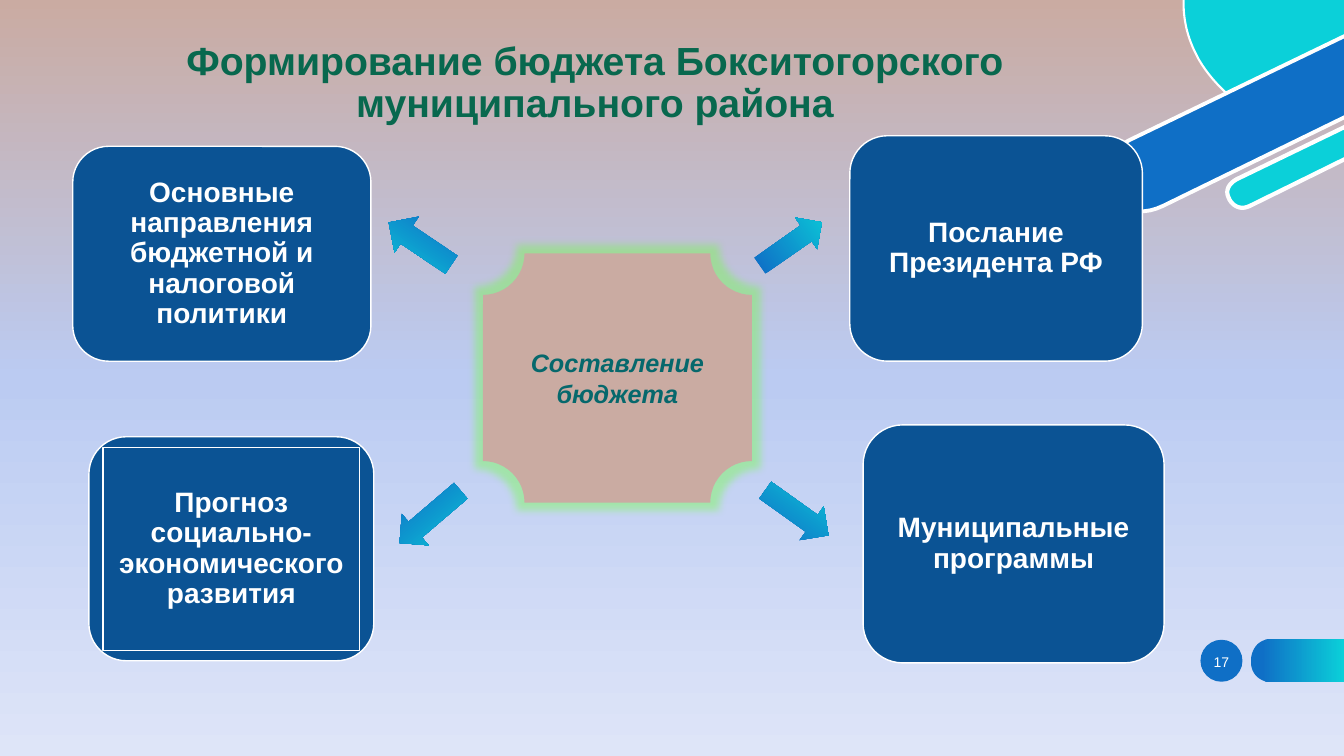
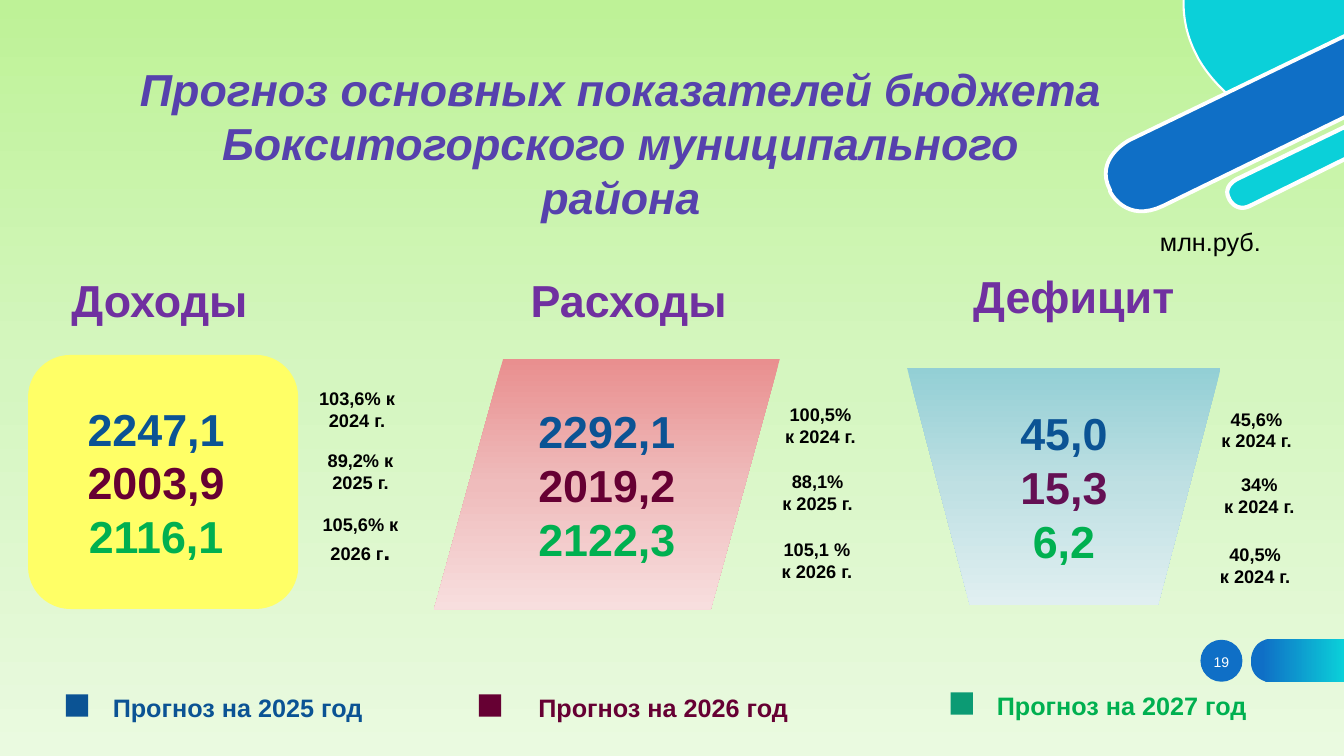
from copy import deepcopy
from dataclasses import dataclass

from lxml.etree import SubElement
from pptx import Presentation
from pptx.dml.color import RGBColor
from pptx.enum.shapes import MSO_SHAPE
from pptx.enum.text import MSO_ANCHOR, MSO_AUTO_SIZE, PP_ALIGN
from pptx.oxml.ns import qn
from pptx.slide import Slide
from pptx.util import Pt


@dataclass(frozen=True)
class Theme:
    font: str = "Arial"
    blue: str = "0F6FC6"
    cyan: str = "0BD0D9"
    white: str = "FFFFFF"
    black: str = "000000"
    navy: str = "0B5394"
    wine: str = "660033"
    plum: str = "641054"
    green: str = "00B050"
    sea: str = "0C9B74"
    forest: str = "08684E"
    teal: str = "06686C"
    violet: str = "5641AD"
    purple: str = "7030A0"
    clay: str = "CAABA2"
    yellow: str = "FFFF66"
    glow: str = "70FF3E"
    accent: tuple = ((0.12, "0F6FC6"), (1, "0BD0D9"))
    dusk: tuple = ((0, "CAABA2"), (0.5, "BBCBF2"), (1, "DEE5F8"))
    meadow: tuple = ((0, "BEF297"), (0.5, "D5F6C0"), (1, "EAFAE0"))
    rose: tuple = ((0, "E98F8F"), (0.5, "EFBCBC"), (1, "F7DEDE"))
    lagoon: tuple = ((0, "93CFD5"), (0.5, "BFE0E3"), (1, "E0EFF1"))
    large: int = 32
    title: int = 28
    card: int = 20
    label: int = 18
    note: int = 13
    number: int = 10


theme = Theme()


def paint(owner, colours, angle=90, line=None):
    if isinstance(owner, Slide):
        fill = owner.background.fill
    else:
        fill = owner.fill
        owner.shadow.inherit = False
        if line:
            owner.line.color.rgb = RGBColor.from_string(theme.white)
            owner.line.width = Pt(line)
        else:
            owner.line.fill.background()
    if isinstance(colours, str):
        fill.solid()
        fill.fore_color.rgb = RGBColor.from_string(colours)
        return
    fill.gradient()
    fill.gradient_angle = 360 - angle
    stop_list = next(owner.element.iter(qn("a:gsLst")))
    for _ in colours[2:]:
        stop_list.append(deepcopy(stop_list[0]))
    for stop, (position, colour) in zip(fill.gradient_stops, colours):
        stop.position = position
        stop.color.rgb = RGBColor.from_string(colour)


def write(box, text, size, colour, bold=True, italic=False,
          align=PP_ALIGN.CENTER, spacing=None):
    frame = box.text_frame
    frame.text = text
    frame.word_wrap = True
    frame.auto_size = MSO_AUTO_SIZE.NONE
    frame.vertical_anchor = MSO_ANCHOR.MIDDLE
    for paragraph in frame.paragraphs:
        paragraph.alignment = align
        paragraph.line_spacing = spacing
        font = paragraph.font
        font.name = theme.font
        font.size = Pt(size)
        font.bold = bold
        font.italic = italic
        font.color.rgb = RGBColor.from_string(colour)


deck = Presentation()
deck.slide_width, deck.slide_height = Pt(960), Pt(540)
layout = deck.slide_layouts[5]
for holder in list(layout.placeholders):
    if holder.placeholder_format.idx:
        layout.shapes.element.remove(holder.element)

pages = []
for number, heading, place, size, colour, italic, spacing, backdrop in (
    ("17", "Формирование бюджета Бокситогорского муниципального района",
     (41, 26, 768, 68), theme.title, theme.forest, False, 0.9, theme.dusk),
    ("19", "Прогноз основных показателей бюджета Бокситогорского муниципального района",
     (92, 40, 703, 124), theme.large, theme.violet, True, 1, theme.meadow),
):
    page = deck.slides.add_slide(layout)
    pages.append(page)
    paint(page, backdrop)
    title = page.shapes.title
    title.left, title.top, title.width, title.height = map(Pt, place)
    write(title, heading, size, colour, italic=italic, spacing=spacing)
forming_page, forecast_page = pages

outlines = (
    (theme.cyan, 1.5, (
        (845.5, -2), (845, 11, 847, 24, 854, 38), (855, 40),
        (855, 40, 862, 55, 880, 70), (962, 30), (962, -2))),
    (theme.blue, 2.75, (
        (807, 100), (807, 100, 781, 113, 793, 136), (793, 137),
        (793, 137, 804, 160, 831, 147), (962, 83), (962, 25))),
    (theme.cyan, 3, (
        (883.5, 128), (883.5, 128, 873, 133, 878, 142),
        (878, 142.5, 883, 152, 893, 147), (962, 113), (962, 90))),
    (theme.accent, None, (
        (908.5, 487.5), (908.5, 487.5, 893.5, 487.5, 893.5, 472),
        (893.5, 472, 893.5, 456.5, 908.5, 456.5), (960, 456.5), (960, 487.5))),
)
decorations = []
for colours, line, steps in outlines:
    pen = steps[0]
    points = []
    for step in steps[1:]:
        if len(step) == 2:
            points.append(step)
        else:
            corners = (pen, step[:2], step[2:4], step[4:])
            for part in range(1, 17):
                t = part / 16
                weights = ((1 - t) ** 3, 3 * t * (1 - t) ** 2, 3 * t * t * (1 - t), t ** 3)
                points.append(tuple(
                    sum(weight * corner[axis] for weight, corner in zip(weights, corners))
                    for axis in (0, 1)))
        pen = points[-1]
    builder = forming_page.shapes.build_freeform(Pt(steps[0][0]), Pt(steps[0][1]))
    builder.add_line_segments([(Pt(x), Pt(y)) for x, y in points], close=True)
    outline = builder.convert_to_shape()
    paint(outline, colours, 0, line)
    decorations.append(outline)
badge = forming_page.shapes.add_shape(MSO_SHAPE.OVAL, Pt(857.5), Pt(457), Pt(30), Pt(30))
paint(badge, theme.blue)
decorations.append(badge)
for decoration in decorations:
    layout.shapes.element.append(decoration.element)

for page, number in zip(pages, ("17", "19")):
    box = page.shapes.add_textbox(Pt(851), Pt(458), Pt(43), Pt(29))
    write(box, number, theme.number, theme.white, bold=False)

plaque = forming_page.shapes.add_shape(MSO_SHAPE.PLAQUE, Pt(345), Pt(181), Pt(192), Pt(178))
paint(plaque, theme.clay)
glow = SubElement(next(plaque.element.iter(qn("a:effectLst"))), qn("a:glow"), rad=str(Pt(11)))
glow_colour = SubElement(glow, qn("a:srgbClr"), val=theme.glow)
SubElement(glow_colour, qn("a:alpha"), val="40000")
write(plaque, "Составление бюджета", theme.label, theme.teal, italic=True)

for text, place, frame_place in (
    ("Основные направления бюджетной и налоговой политики", (52, 104.5, 213, 153.5), None),
    ("Прогноз социально-экономического развития", (63.5, 312, 203.5, 160),
     (73.5, 319.5, 183.5, 145)),
    ("Послание Президента РФ", (607, 97, 209, 161), None),
    ("Муниципальные программы", (616.5, 303.5, 215, 170), None),
):
    card = forming_page.shapes.add_shape(MSO_SHAPE.ROUNDED_RECTANGLE, *map(Pt, place))
    paint(card, theme.navy, line=1)
    if frame_place:
        card = forming_page.shapes.add_shape(MSO_SHAPE.RECTANGLE, *map(Pt, frame_place))
        paint(card, theme.navy, line=1)
    write(card, text, theme.card, theme.white, spacing=0.9)

for kind, place, rotation in (
    (MSO_SHAPE.DOWN_ARROW, (284.5, 147, 31, 54), 124),
    (MSO_SHAPE.RIGHT_ARROW, (538, 160.5, 54, 27.5), 325),
    (MSO_SHAPE.DOWN_ARROW, (292.5, 340.5, 29.5, 57.5), 49.5),
    (MSO_SHAPE.DOWN_ARROW, (554.5, 338.5, 29.5, 55.5), 305.5),
):
    arrow = forming_page.shapes.add_shape(kind, *map(Pt, place))
    arrow.rotation = rotation
    paint(arrow, theme.accent, 0)

for kind, place, colours, values, third_colour, right_margin in (
    (MSO_SHAPE.FLOWCHART_ALTERNATE_PROCESS, (20, 253.5, 193, 181.5), theme.yellow,
     "2247,1\n2003,9\n2116,1", theme.wine, 17),
    (MSO_SHAPE.FLOWCHART_DATA, (310, 256.5, 247, 179), theme.rose,
     "2292,1\n2019,2\n2122,3", theme.wine, 7),
    (MSO_SHAPE.FLOWCHART_MANUAL_OPERATION, (648, 263, 224, 169), theme.lagoon,
     "45,0\n15,3\n6,2", theme.plum, 7),
):
    panel = forecast_page.shapes.add_shape(kind, *map(Pt, place))
    paint(panel, colours)
    write(panel, values, theme.large, theme.navy)
    panel.text_frame.margin_right = Pt(right_margin)
    for paragraph, colour in zip(panel.text_frame.paragraphs[1:], (third_colour, theme.green)):
        paragraph.font.color.rgb = RGBColor.from_string(colour)

for text, left, top in (("Доходы", 44, 191), ("Расходы", 372, 191), ("Дефицит", 688, 188)):
    box = forecast_page.shapes.add_textbox(Pt(left), Pt(top), Pt(169), Pt(46))
    write(box, text, theme.large, theme.purple, align=PP_ALIGN.LEFT)

for text, left, top in (
    ("103,6% к 2024 г.", 219, 273),
    ("89,2% к 2025 г.", 221.5, 317),
    ("100,5%\nк 2024 г.", 550, 284.5),
    ("88,1%\nк 2025 г.", 548, 332),
    ("105,1 %\nк 2026 г.", 547.5, 380.5),
    ("45,6%\nк 2024 г.", 861.5, 287.5),
    ("34%\nк 2024 г.", 863.5, 334),
    ("40,5%\nк 2024 г.", 860.5, 384.5),
    ("105,6% к 2026 г", 221.5, 366),
):
    note = forecast_page.shapes.add_textbox(Pt(left), Pt(top), Pt(72), Pt(39))
    write(note, text, theme.note, theme.black)
span = note.text_frame.paragraphs[0].add_run()
span.text = "."
span.font.size = Pt(theme.label)

for year, left, top, text_left, square_colour, text_colour in (
    (2025, 47, 496, 73.5, theme.navy, theme.navy),
    (2026, 342, 496, 377.5, theme.wine, theme.wine),
    (2027, 679, 494.5, 705, theme.sea, theme.green),
):
    square = forecast_page.shapes.add_shape(
        MSO_SHAPE.RECTANGLE, Pt(left), Pt(top), Pt(16), Pt(16))
    paint(square, square_colour)
    box = forecast_page.shapes.add_textbox(Pt(text_left), Pt(top - 5.5), Pt(200), Pt(29))
    write(box, f"Прогноз на {year} год", theme.label, text_colour, align=PP_ALIGN.LEFT)

unit = forecast_page.shapes.add_textbox(Pt(821.5), Pt(158), Pt(114), Pt(29))
write(unit, "млн.руб.", theme.label, theme.black, bold=False, align=PP_ALIGN.LEFT)

deck.save("out.pptx")
